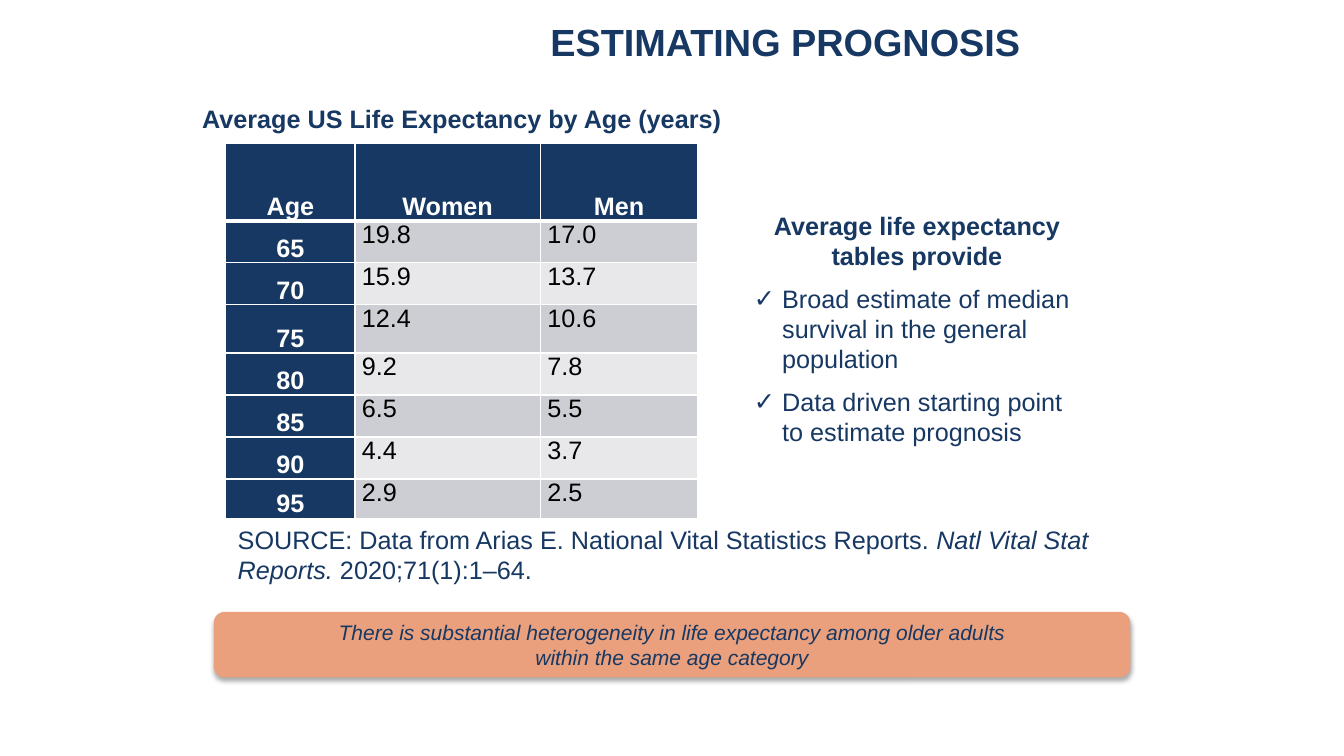
from lxml.etree import SubElement
from pptx import Presentation
from pptx.dml.color import RGBColor
from pptx.enum.shapes import MSO_SHAPE
from pptx.enum.text import MSO_ANCHOR, PP_ALIGN
from pptx.oxml import parse_xml
from pptx.oxml.ns import nsdecls, qn
from pptx.util import Inches, Pt

NAVY = "173863"
HEADING_NAVY = "173862"
WHITE = "FFFFFF"


def color(hex_string):
    return RGBColor.from_string(hex_string)


def write(frame, text, size=18, fill=NAVY, bold=False, italic=False,
          align=PP_ALIGN.LEFT, new=False, after=0, before=0, bullet=None):
    """Write one paragraph; text is a string or a list of (text, italic) runs."""
    paragraph = frame.add_paragraph() if new else frame.paragraphs[0]
    if bullet:
        properties = paragraph._p.get_or_add_pPr()
        properties.set("marL", str(Inches(0.28)))
        properties.set("indent", str(-Inches(0.28)))
        SubElement(properties, qn("a:buFont")).set("typeface", "Arial")
        SubElement(properties, qn("a:buChar")).set("char", bullet)
    paragraph.alignment = align
    paragraph.space_before, paragraph.space_after = Pt(before), Pt(after)
    runs = [(text, italic)] if isinstance(text, str) else text
    for run_text, run_italic in runs:
        run = paragraph.add_run()
        run.text = run_text
        run.font.name, run.font.size = "Arial", Pt(size)
        run.font.bold, run.font.italic = bold, run_italic
        run.font.color.rgb = color(fill)
    return paragraph


presentation = Presentation()
presentation.slide_width = Inches(13.33)
presentation.slide_height = Inches(7.5)
slide = presentation.slides.add_slide(presentation.slide_layouts[6])

# Text boxes: left, top, width, height, anchor
boxes = {
    "title": (3.96, 0.13, 7.66, 0.62, MSO_ANCHOR.MIDDLE),
    "table heading": (1.28, 0.98, 6.6, 0.4, MSO_ANCHOR.TOP),
    "uses": (7.38, 2.01, 3.43, 2.5, MSO_ANCHOR.MIDDLE),
    "source": (2.26, 5.15, 9.26, 0.71, MSO_ANCHOR.TOP),
}
frames = {}
for name, (left, top, width, height, anchor) in boxes.items():
    shape = slide.shapes.add_textbox(Inches(left), Inches(top), Inches(width), Inches(height))
    frames[name] = shape.text_frame
    frames[name].word_wrap = True
    frames[name].vertical_anchor = anchor

title = write(frames["title"], "ESTIMATING PROGNOSIS", size=27, bold=True, align=PP_ALIGN.CENTER)
title.line_spacing = 0.9
write(frames["table heading"], "Average US Life Expectancy by Age (years)",
      fill=HEADING_NAVY, bold=True, align=PP_ALIGN.CENTER)
write(frames["uses"], "Average life expectancy tables provide",
      bold=True, align=PP_ALIGN.CENTER, after=4.5)
for use in ("Broad estimate of median survival in the general population",
            "Data driven starting point to estimate prognosis"):
    write(frames["uses"], use, new=True, before=4.5, after=4.5, bullet="✓")
write(frames["source"], [
    ("SOURCE: Data from Arias E. National Vital Statistics Reports. ", False),
    ("Natl Vital Stat Reports. ", True),
    ("2020;71(1):1–64.", False),
], fill=HEADING_NAVY)

# Life expectancy table
rows = [
    ("Age", "Women", "Men"),
    ("65", "19.8", "17.0"),
    ("70", "15.9", "13.7"),
    ("75", "12.4", "10.6"),
    ("80", "9.2", "7.8"),
    ("85", "6.5", "5.5"),
    ("90", "4.4", "3.7"),
    ("95", "2.9", "2.5"),
]
table = slide.shapes.add_table(len(rows), 3, Inches(2.24), Inches(1.42),
                               Inches(4.68), Inches(3.72)).table
for column, width in zip(table.columns, (1.28, 1.84, 1.56)):
    column.width = Inches(width)
special_heights = {0: 0.77, 3: 0.48, 7: 0.39}
for row_index, row in enumerate(table.rows):
    row.height = Inches(special_heights.get(row_index, 5 / 12))

for row_index, values in enumerate(rows):
    for column_index, value in enumerate(values):
        cell = table.cell(row_index, column_index)
        heading = row_index == 0 or column_index == 0
        cell.margin_left = cell.margin_right = Inches(0.07)
        cell.margin_top = cell.margin_bottom = 0
        cell.vertical_anchor = MSO_ANCHOR.BOTTOM if heading else MSO_ANCHOR.TOP
        # A thicker rule closes the header
        for side in ("L", "R", "T", "B"):
            width = Pt(3 if row_index == 0 and side == "B" else 1)
            cell._tc.get_or_add_tcPr().append(parse_xml(
                f'<a:ln{side} {nsdecls("a")} w="{width}"><a:solidFill>'
                f'<a:srgbClr val="{WHITE}"/></a:solidFill></a:ln{side}>'))
        band = "CCCED3" if row_index % 2 else "E8E8EA"
        cell.fill.solid()
        cell.fill.fore_color.rgb = color(NAVY if heading else band)
        write(cell.text_frame, value, bold=heading, fill=WHITE if heading else "000000",
              align=PP_ALIGN.CENTER if heading else PP_ALIGN.LEFT)

# Takeaway banner with a soft shadow below
banner = slide.shapes.add_shape(MSO_SHAPE.ROUNDED_RECTANGLE, Inches(2.12), Inches(6.07),
                                Inches(9.09), Inches(0.65))
banner.fill.solid()
banner.fill.fore_color.rgb = color("EAA07D")
banner.line.fill.background()
banner.shadow.inherit = False
banner._element.spPr.find(qn("a:effectLst")).append(parse_xml(
    f'<a:outerShdw {nsdecls("a")} blurRad="{Pt(3.5)}" dist="{Pt(2.2)}" dir="5400000" '
    'rotWithShape="0"><a:srgbClr val="000000"><a:alpha val="32000"/></a:srgbClr></a:outerShdw>'))
banner.text_frame.word_wrap = True
banner.text_frame.vertical_anchor = MSO_ANCHOR.MIDDLE
for index, line in enumerate((
        "There is substantial heterogeneity in life expectancy among older adults",
        "within the same age category")):
    write(banner.text_frame, line, size=15, italic=True, align=PP_ALIGN.CENTER, new=index > 0)

presentation.save("out.pptx")
